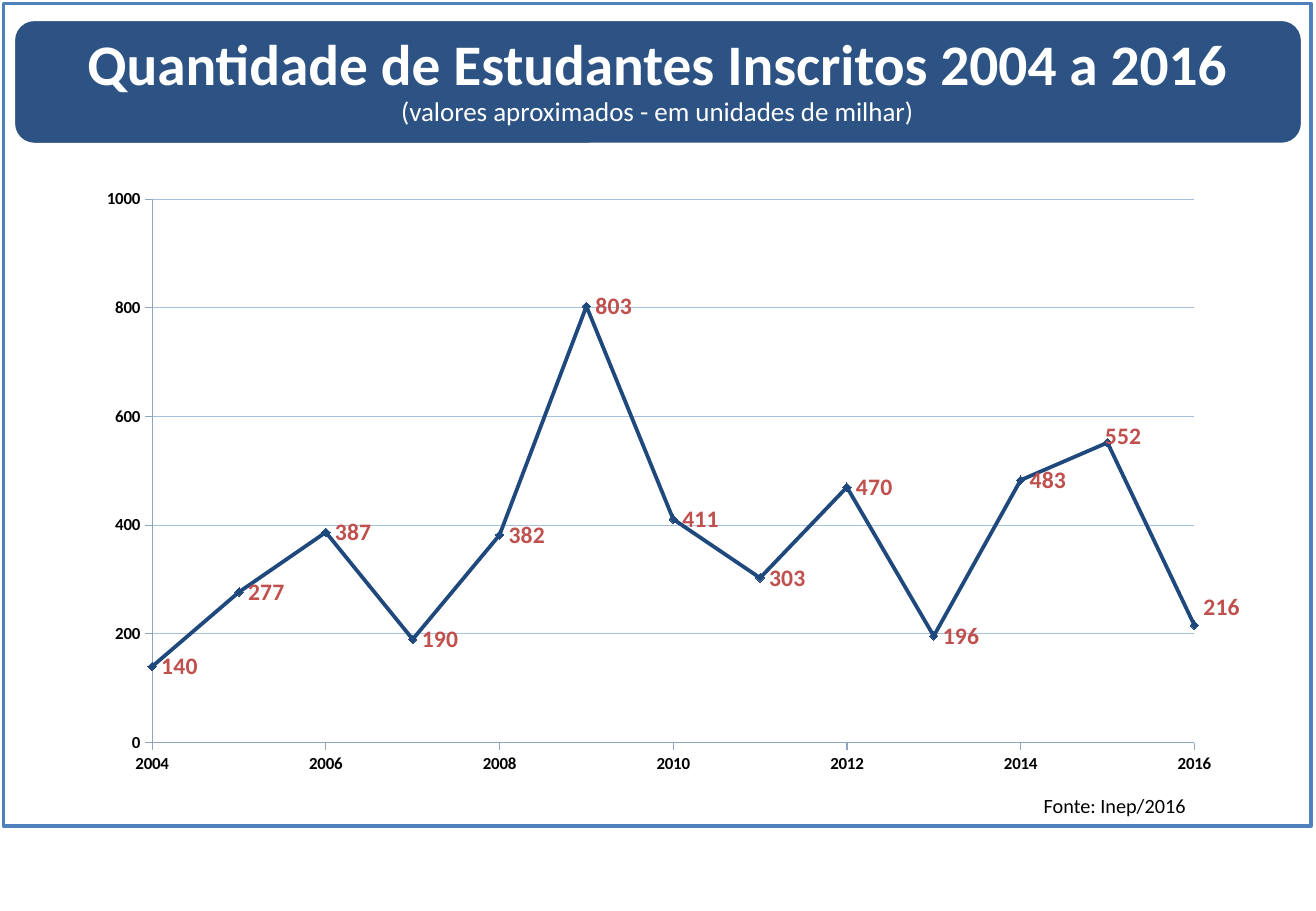
from lxml import etree
from pptx import Presentation
from pptx.chart.data import XyChartData
from pptx.dml.color import RGBColor
from pptx.enum.chart import XL_CHART_TYPE as ChartType
from pptx.enum.chart import XL_LABEL_POSITION as LabelPosition
from pptx.enum.chart import XL_MARKER_STYLE as MarkerStyle
from pptx.enum.chart import XL_TICK_MARK as TickMark
from pptx.enum.shapes import MSO_SHAPE as Shape
from pptx.enum.text import MSO_ANCHOR as Anchor, MSO_AUTO_SIZE as AutoSize, PP_ALIGN as Align
from pptx.oxml import parse_xml
from pptx.oxml.ns import nsdecls, qn
from pptx.util import Inches, Pt

WHITE = RGBColor(0xFF, 0xFF, 0xFF)
BLACK = RGBColor(0, 0, 0)
NAVY = RGBColor(0x1F, 0x49, 0x7D)
BLUE = RGBColor(0x4F, 0x81, 0xBD)
RED = RGBColor(0xC0, 0x50, 0x4D)
GRID = RGBColor(0xA7, 0xC0, 0xDE)
AXIS = RGBColor(0x8F, 0xA4, 0xBE)
FONT = "Calibri"

STUDENTS = [140, 277, 387, 190, 382, 803, 411, 303, 470, 196, 483, 552, 216]
FIRST_YEAR, LAST_YEAR = 2004, 2016
LABEL_SHIFTS = {11: (-0.01, -0.01), 12: (0, -0.03)}


def add_panel(kind, left, top, width, height, fill, opacity, line):
    panel = slide.shapes.add_shape(kind, Inches(left), Inches(top), Inches(width), Inches(height))
    panel.shadow.inherit = False
    panel.fill.solid()
    panel.fill.fore_color.rgb = fill
    color = panel.fill._xPr.find(qn("a:solidFill"))[0]
    etree.SubElement(color, qn("a:alpha")).set("val", str(opacity * 1000))
    panel.line.color.rgb = line
    panel.line.width = Pt(2)


def style_font(font, size, color, bold):
    font.name = FONT
    font.size = Pt(size)
    font.color.rgb = color
    font.bold = bold


deck = Presentation()
deck.slide_width, deck.slide_height = Inches(10.83), Inches(7.5)
slide = deck.slides.add_slide(deck.slide_layouts[5])

# Frame and header band
add_panel(Shape.RECTANGLE, 0.03, 0.03, 10.76, 6.77, WHITE, 90, BLUE)
add_panel(Shape.ROUNDED_RECTANGLE, 0.11, 0.16, 10.61, 1.03, NAVY, 94, WHITE)

# Title, brought in front of the band
title = slide.shapes.title
slide.shapes._spTree.append(title._element)
title.left, title.top = Inches(0.16), Inches(0.21)
title.width, title.height = Inches(10.5), Inches(0.93)
frame = title.text_frame
frame.word_wrap = True
frame.auto_size = AutoSize.NONE
frame.vertical_anchor = Anchor.MIDDLE
frame.margin_left = frame.margin_right = Inches(0.27)
frame.margin_top = frame.margin_bottom = 0
title_lines = [
    ("Quantidade de Estudantes Inscritos 2004 a 2016", 34, True),
    ("(valores aproximados - em unidades de milhar)", 16, False),
]
for index, (text, size, bold) in enumerate(title_lines):
    para = frame.add_paragraph() if index else frame.paragraphs[0]
    para.alignment = Align.CENTER
    para.line_spacing = 0.9
    para.space_before = para.space_after = Pt(0)
    span = para.add_run()
    span.text = text
    style_font(span.font, size, WHITE, bold)

# Source note
note = slide.shapes.add_textbox(Inches(8.49), Inches(6.48), Inches(2.28), Inches(0.3))
note.text_frame.word_wrap = True
span = note.text_frame.paragraphs[0].add_run()
span.text = "Fonte: Inep/2016"
style_font(span.font, 12, BLACK, False)

# Chart of students per year
data = XyChartData()
points = data.add_series("Series 1")
for year, count in enumerate(STUDENTS, FIRST_YEAR):
    points.add_data_point(year, count)
chart = slide.shapes.add_chart(
    ChartType.XY_SCATTER_SMOOTH, Inches(0.69), Inches(1.47), Inches(9.53), Inches(5.01), data
).chart
chart.has_legend = False
chart.has_title = False
style_font(chart.font, 10, BLACK, False)
chart.plots[0].vary_by_categories = False

# Plot area placement
plot_area = chart._chartSpace.chart.plotArea
for old_layout in plot_area.findall(qn("c:layout")):
    plot_area.remove(old_layout)
plot_area.insert(0, parse_xml(
    f'<c:layout {nsdecls("c")}><c:manualLayout><c:layoutTarget val="inner"/>'
    '<c:xMode val="edge"/><c:yMode val="edge"/><c:x val="0.059"/><c:y val="0.034"/>'
    '<c:w val="0.9"/><c:h val="0.893"/></c:manualLayout></c:layout>'))

# Axes
axes = [
    (chart.category_axis, FIRST_YEAR, LAST_YEAR, 2),
    (chart.value_axis, 0, 1000, 200),
]
for axis, low, high, step in axes:
    axis.minimum_scale, axis.maximum_scale, axis.major_unit = low, high, step
    axis.major_tick_mark, axis.minor_tick_mark = TickMark.OUTSIDE, TickMark.NONE
    axis.has_major_gridlines = False
    axis.format.line.color.rgb = AXIS
    axis.format.line.width = Pt(0.75)
    axis.tick_labels.number_format = "General"
    axis.tick_labels.number_format_is_linked = False
    style_font(axis.tick_labels.font, 10, BLACK, True)
grid = chart.value_axis.major_gridlines.format.line
grid.color.rgb = GRID
grid.width = Pt(0.75)

# Curve and markers
series = chart.plots[0].series[0]
series.format.line.color.rgb = NAVY
series.format.line.width = Pt(2.25)
series.marker.style = MarkerStyle.DIAMOND
series.marker.size = 5
series.marker.format.fill.solid()
series.marker.format.fill.fore_color.rgb = NAVY
series.marker.format.line.color.rgb = NAVY

# Value labels, the last two nudged off the curve
for index in range(len(STUDENTS)):
    label = series.points[index].data_label
    style_font(label.font, 14, RED, True)
    label.position = LabelPosition.RIGHT
for index, (shift_x, shift_y) in LABEL_SHIFTS.items():
    label_id = series._element.xpath(f'c:dLbls/c:dLbl/c:idx[@val="{index}"]')[0]
    label_id.addnext(parse_xml(
        f'<c:layout {nsdecls("c")}><c:manualLayout><c:x val="{shift_x}"/>'
        f'<c:y val="{shift_y}"/></c:manualLayout></c:layout>'))

deck.save("out.pptx")
